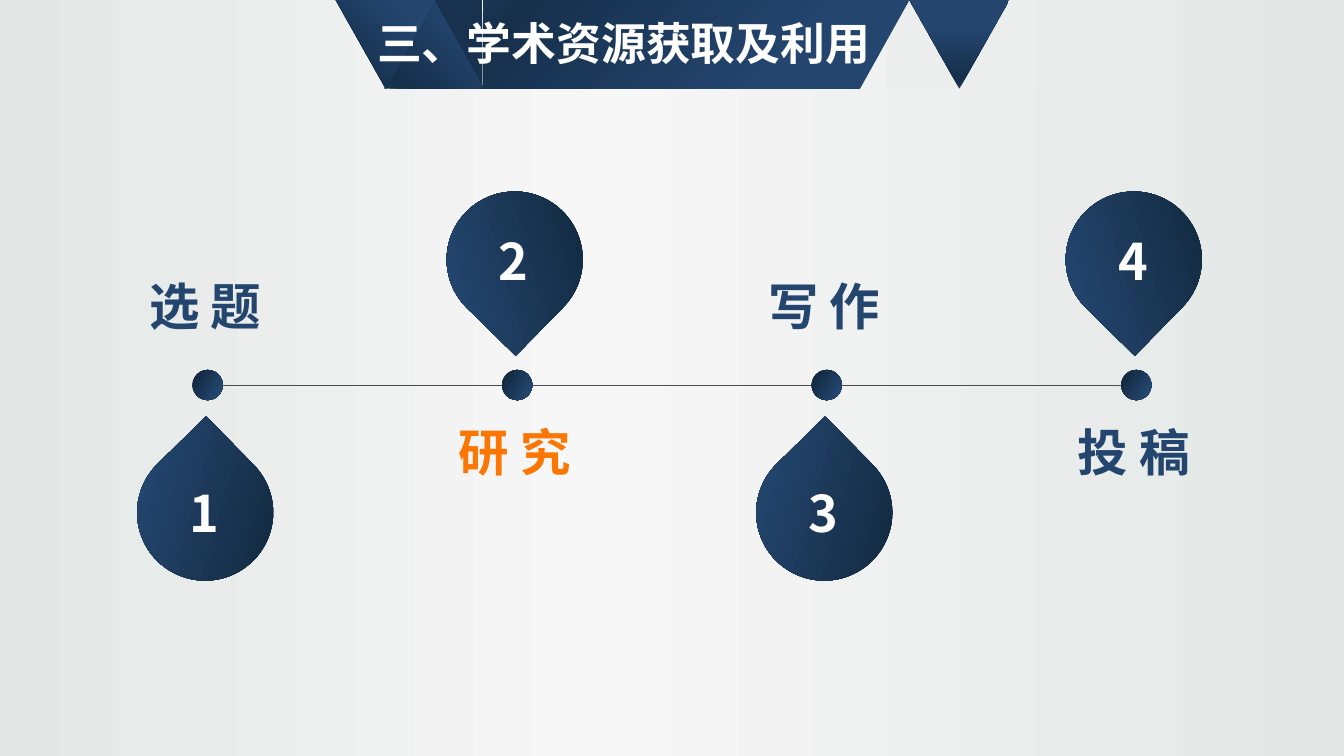
"""Builds a slide with a faceted title banner and a four-step research timeline."""
from lxml import etree
from pptx import Presentation
from pptx import util as u
from pptx.dml.color import RGBColor
from pptx.enum import shapes, text
from pptx.oxml.ns import qn

FONT = "Noto Sans CJK SC"
COLORS = {
    "edge": "E3E7E5", "centre": "F7F7F7", "panel": "ECEEED",
    "night": "0F2437", "steel": "284D7A", "navy": "23456E",
    "deep": "1A3655", "dark": "16304C", "fold": "17314E",
    "line": "4C4B50", "orange": "FC7603", "white": "FFFFFF",
}
KIND = shapes.MSO_SHAPE
STEPS = [("选 题", "navy"), ("研 究", "orange"), ("写 作", "navy"), ("投 稿", "navy")]
FIRST_PIN, STEP_GAP = 1.36, 3.07
PIN_SIZE, DOT_SIZE = 1.35, 0.3
BANNER_HEIGHT = 0.88


def inches(*lengths):
    return [u.Inches(length) for length in lengths]


def color(name):
    return RGBColor.from_string(COLORS[name])


def paint_gradient(fill, properties, stops, angle):
    fill.gradient()
    fill.gradient_angle = 360 - angle
    stop_list = properties.find(qn("a:gradFill")).find(qn("a:gsLst"))
    for old_stop in list(stop_list):
        stop_list.remove(old_stop)
    for position, name in stops:
        stop = etree.SubElement(stop_list, qn("a:gs"), pos=str(position * 1000))
        etree.SubElement(stop, qn("a:srgbClr"), val=COLORS[name])


def add_figure(page, kind, at, fill=None, stops=None, angle=30, flip="", rotation=0):
    figure = page.shapes.add_shape(kind, *inches(*at))
    figure.shadow.inherit = False
    figure.line.fill.background()
    figure.rotation = rotation
    properties = figure.element.spPr
    for axis in flip:
        properties.find(qn("a:xfrm")).set(f"flip{axis}", "1")
    if fill:
        figure.fill.solid()
        figure.fill.fore_color.rgb = color(fill)
    else:
        stops = stops or [(0, "night"), (100, "steel")]
        paint_gradient(figure.fill, properties, stops, angle)


def write_text(box, words, size=36, fill="navy", wrap=False):
    frame = box.text_frame
    frame.word_wrap = wrap
    frame.auto_size = text.MSO_AUTO_SIZE.SHAPE_TO_FIT_TEXT
    frame.vertical_anchor = text.MSO_ANCHOR.TOP
    para = frame.paragraphs[0]
    para.alignment = text.PP_ALIGN.LEFT
    span = para.add_run()
    span.text = words
    span.font.size = u.Pt(size)
    span.font.bold = True
    span.font.name = FONT
    span.font.color.rgb = color(fill)
    etree.SubElement(span.font._element, qn("a:ea"), typeface=FONT)


def add_label(page, words, left, top, width, **style):
    box = page.shapes.add_textbox(*inches(left, top, width, 0.71))
    write_text(box, words, **style)


def add_axis(page):
    axis = page.shapes.add_connector(
        shapes.MSO_CONNECTOR.STRAIGHT, *inches(1.93, 3.82, 11.38, 3.82))
    axis.line.color.rgb = color("line")
    axis.line.width = u.Pt(0.5)
    etree.SubElement(axis.element.spPr, qn("a:effectLst"))


def add_step(page, index, name, fill):
    left = FIRST_PIN + index * STEP_GAP
    above = index % 2 == 1
    add_figure(page, KIND.OVAL, (left + 0.55, 3.67, DOT_SIZE, DOT_SIZE))
    add_figure(page, KIND.TEAR, (left, 1.9 if above else 4.41, PIN_SIZE, PIN_SIZE),
               rotation=134.4 if above else 225.6, flip="" if above else "V")
    add_label(page, name, left + 0.02, 4.13 if above else 2.68, 1.35, fill=fill)
    add_label(page, str(index + 1), left + 0.42, 2.23 if above else 4.73, 0.51, fill="white")


def add_banner(page):
    def facet(kind, left, width, middle=13, end=78, **style):
        stops = [(0, "deep"), (middle, "dark"), (end, "navy")]
        add_figure(page, kind, (left, 0, width, BANNER_HEIGHT), stops=stops, **style)

    facet(KIND.RECTANGLE, 8.79, 1.5, fill="panel")
    facet(KIND.RIGHT_TRIANGLE, 8.53, 0.49, fill="navy", flip="V")
    facet(KIND.RECTANGLE, 4.79, 3.74, middle=10, angle=45)
    facet(KIND.RIGHT_TRIANGLE, 4.29, 0.49, fill="fold", flip="HV")
    facet(KIND.ISOSCELES_TRIANGLE, 3.81, 0.99, angle=315)
    facet(KIND.ISOSCELES_TRIANGLE, 3.33, 0.99, middle=17, angle=135, flip="HV")
    facet(KIND.ISOSCELES_TRIANGLE, 9.02, 0.99, end=70, angle=90, flip="HV")


def place_title(page, words):
    title = page.shapes.title
    title.left, title.top, title.width, title.height = inches(3.64, 0.11, 5.12, 0.64)
    write_text(title, words, size=32, fill="white", wrap=True)
    title.element.getparent().append(title.element)


def main():
    deck = Presentation()
    deck.slide_width, deck.slide_height = inches(13.33, 7.5)
    page = deck.slides.add_slide(deck.slide_layouts[5])
    fill = page.background.fill
    fill.solid()
    paint_gradient(fill, page.element.find(".//" + qn("p:bgPr")),
                   [(1, "edge"), (56, "centre"), (100, "edge")], 180)
    add_axis(page)
    for index, (name, shade) in enumerate(STEPS):
        add_step(page, index, name, shade)
    add_banner(page)
    place_title(page, "三、学术资源获取及利用")
    deck.save("out.pptx")


if __name__ == "__main__":
    main()
